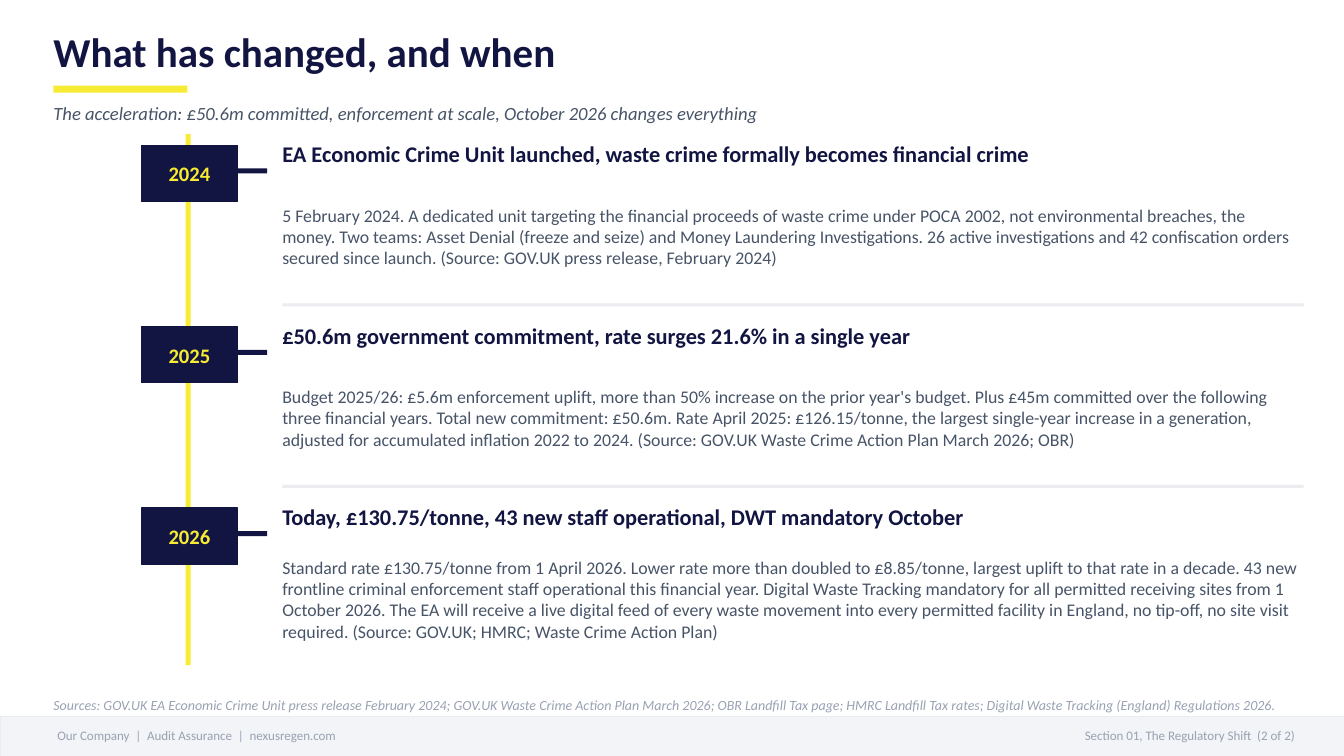
from pptx import Presentation
from pptx.dml.color import RGBColor
from pptx.enum.shapes import MSO_SHAPE
from pptx.enum.text import MSO_ANCHOR, PP_ALIGN
from pptx.util import Inches, Pt

RECT = MSO_SHAPE.RECTANGLE
MIDDLE = MSO_ANCHOR.MIDDLE
LEFT, CENTER, RIGHT = PP_ALIGN.LEFT, PP_ALIGN.CENTER, PP_ALIGN.RIGHT

W, H = 13.33, 7.5
MARGIN = 0.53
TEXT_W = 12.27
FONT = "Calibri"
NAVY, YELLOW, SLATE = "121541", "F7EC33", "475467"
MUTED, RULE, PALE = "98A2B3", "EAECF0", "F2F4F7"

EVENTS = [
    ("2024",
     "EA Economic Crime Unit launched, waste crime formally becomes financial crime",
     "5 February 2024. A dedicated unit targeting the financial proceeds of waste crime "
     "under POCA 2002, not environmental breaches, the money. Two teams: Asset Denial "
     "(freeze and seize) and Money Laundering Investigations. 26 active investigations "
     "and 42 confiscation orders secured since launch. (Source: GOV.UK press release, "
     "February 2024)"),
    ("2025",
     "£50.6m government commitment, rate surges 21.6% in a single year",
     "Budget 2025/26: £5.6m enforcement uplift, more than 50% increase on the prior "
     "year's budget. Plus £45m committed over the following three financial years. Total "
     "new commitment: £50.6m. Rate April 2025: £126.15/tonne, the largest single-year "
     "increase in a generation, adjusted for accumulated inflation 2022 to 2024. "
     "(Source: GOV.UK Waste Crime Action Plan March 2026; OBR)"),
    ("2026",
     "Today, £130.75/tonne, 43 new staff operational, DWT mandatory October",
     "Standard rate £130.75/tonne from 1 April 2026. Lower rate more than doubled to "
     "£8.85/tonne, largest uplift to that rate in a decade. 43 new frontline criminal "
     "enforcement staff operational this financial year. Digital Waste Tracking mandatory "
     "for all permitted receiving sites from 1 October 2026. The EA will receive a live "
     "digital feed of every waste movement into every permitted facility in England, no "
     "tip-off, no site visit required. (Source: GOV.UK; HMRC; Waste Crime Action Plan)"),
]


def rgb(value):
    return RGBColor.from_string(value)


def write(sp, text, size, color, bold=False, italic=False, align=LEFT, inset=0):
    tf = sp.text_frame
    tf.word_wrap = True
    tf.vertical_anchor = MIDDLE
    tf.margin_left = tf.margin_right = Inches(inset)
    tf.margin_top = tf.margin_bottom = 0
    p = tf.paragraphs[0]
    p.text = text
    p.alignment = align
    font = p.runs[0].font
    font.name, font.size = FONT, Pt(size)
    font.bold, font.italic = bold, italic
    font.color.rgb = rgb(color)


def label(s, x, y, w, h, text, size, color, **style):
    sp = s.shapes.add_textbox(Inches(x), Inches(y), Inches(w), Inches(h))
    write(sp, text, size, color, **style)


def block(s, x, y, w, h, fill, line=None, weight=0.75):
    sp = s.shapes.add_shape(RECT, Inches(x), Inches(y), Inches(w), Inches(h))
    sp.shadow.inherit = False
    sp.fill.solid()
    sp.fill.fore_color.rgb = rgb(fill)
    if line:
        sp.line.color.rgb = rgb(line)
        sp.line.width = Pt(weight)
    else:
        sp.line.fill.background()
    return sp


def header(s, x, y, w):
    label(s, x, y, w, 0.6, "What has changed, and when", 29.3, NAVY, bold=True)
    block(s, x, y + 0.64, 1.33, 0.07, YELLOW)
    label(s, x, y + 0.75, w, 0.32,
          "The acceleration: £50.6m committed, enforcement at scale, "
          "October 2026 changes everything", 13.3, SLATE, italic=True)


def event(s, x, y, w, year, title, detail):
    badge_w, tick_w, text_x = 0.96, 0.29, 1.4
    badge = block(s, x, y + 0.13, badge_w, 0.56, NAVY, NAVY)
    write(badge, year, 14.7, YELLOW, bold=True, align=CENTER)
    block(s, x + badge_w, y + 0.36, tick_w, 0.05, NAVY)
    label(s, x + text_x, y, w - text_x, 0.43, title, 16, NAVY, bold=True)
    label(s, x + text_x, y + 0.42, w - text_x, 1.23, detail, 12.7, SLATE)


def timeline(s, x, y, w, h):
    row_h, text_x = 1.8, 1.4
    block(s, x + 0.44, y, 0.05, h, YELLOW)
    for i, entry in enumerate(EVENTS):
        top = y - 0.02 + i * row_h
        if i:
            block(s, x + text_x, top - 0.1, w - text_x, 0.03, RULE)
        event(s, x, top, w, *entry)


def footer(s, y, h):
    label(s, MARGIN, y - 0.24, TEXT_W, 0.24,
          "Sources: GOV.UK EA Economic Crime Unit press release February 2024; "
          "GOV.UK Waste Crime Action Plan March 2026; OBR Landfill Tax page; "
          "HMRC Landfill Tax rates; Digital Waste Tracking (England) Regulations 2026.",
          10, MUTED, italic=True)
    block(s, 0, y, W, h, PALE, RULE, 0.5)
    label(s, 0.47, y + 0.01, 7.33, 0.35,
          "Our Company  |  Audit Assurance  |  nexusregen.com", 9.3, MUTED, inset=0.1)
    label(s, 8.67, y + 0.01, 4.27, 0.35,
          "Section 01, The Regulatory Shift  (2 of 2)", 9.3, MUTED,
          align=RIGHT, inset=0.1)


def main():
    prs = Presentation()
    prs.slide_width, prs.slide_height = Inches(W), Inches(H)
    s = prs.slides.add_slide(prs.slide_layouts[6])
    header(s, MARGIN, 0.21, TEXT_W)
    timeline(s, 1.4, 1.33, 11.53, 5.27)
    footer(s, 7.11, H - 7.11)
    prs.save("out.pptx")


if __name__ == "__main__":
    main()
